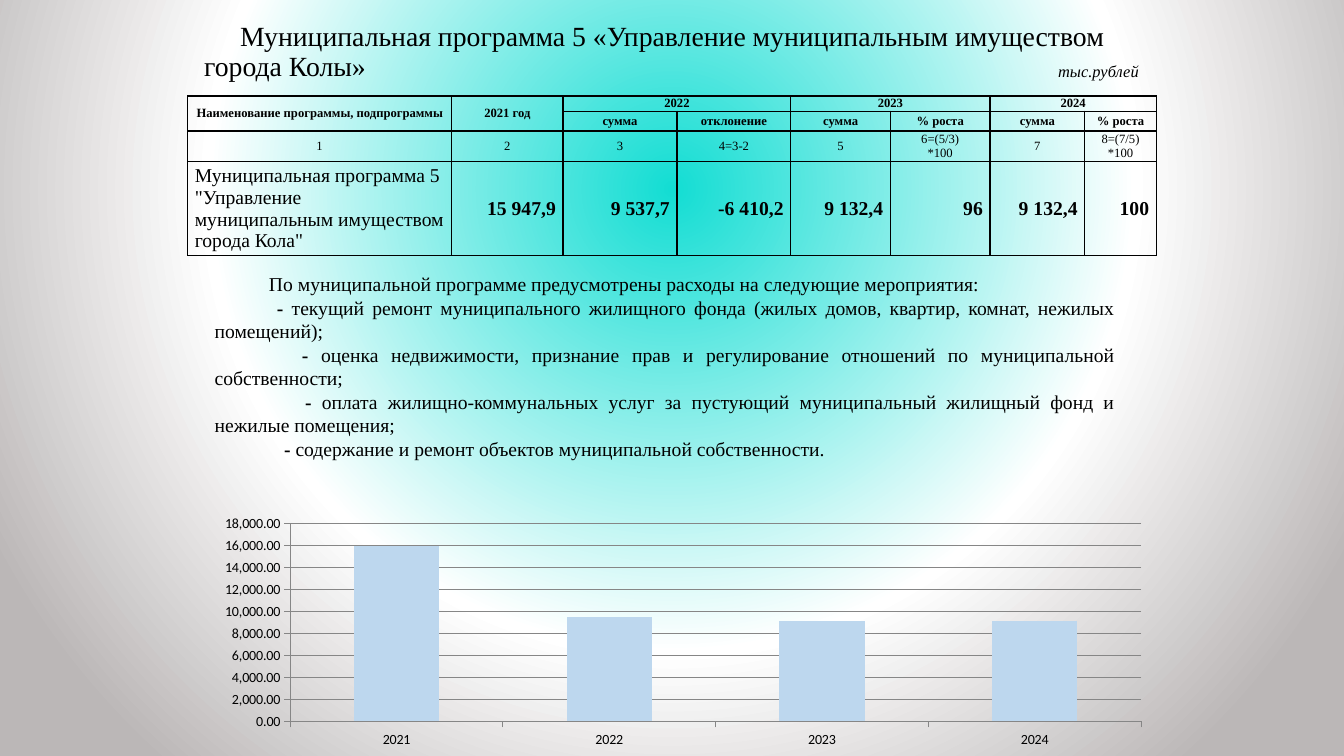
"""Build the slide on municipal programme 5 with its table, measures and chart."""
from lxml import etree
from pptx import Presentation
from pptx.chart.data import CategoryChartData
from pptx.dml.color import RGBColor
from pptx.enum.chart import XL_CHART_TYPE, XL_TICK_MARK
from pptx.enum.text import MSO_ANCHOR, MSO_AUTO_SIZE, PP_ALIGN
from pptx.oxml import parse_xml
from pptx.oxml.ns import nsdecls, qn
from pptx.util import Cm, Pt

LEFT, CENTER, RIGHT, JUSTIFY = PP_ALIGN.LEFT, PP_ALIGN.CENTER, PP_ALIGN.RIGHT, PP_ALIGN.JUSTIFY
MIDDLE = MSO_ANCHOR.MIDDLE
COLUMN_CLUSTERED = XL_CHART_TYPE.COLUMN_CLUSTERED
TICK_OUTSIDE = XL_TICK_MARK.OUTSIDE

SERIF, SANS = "Times New Roman", "Calibri"
COLORS = {
    "text": "000000", "bar": "BDD7EE", "axis": "868686",
    "center": "13DDD3", "ring": "FFFFFF", "edge": "BBB7B7",
}
TITLE = "Муниципальная программа 5 «Управление муниципальным имуществом города Колы»"
UNIT = "тыс.рублей"
ROWS = [
    ["Наименование программы, подпрограммы", "2021 год", "2022", "", "2023", "", "2024", ""],
    ["", "", "сумма", "отклонение", "сумма", "% роста", "сумма", "% роста"],
    ["1", "2", "3", "4=3-2", "5", "6=(5/3)\n*100", "7", "8=(7/5)\n*100"],
    ['Муниципальная программа 5 "Управление муниципальным имуществом города Кола"',
     "15 947,9", "9 537,7", "-6 410,2", "9 132,4", "96", "9 132,4", "100"],
]
MERGES = [(0, 0, 1, 0), (0, 1, 1, 1), (0, 2, 0, 3), (0, 4, 0, 5), (0, 6, 0, 7)]
COLUMN_WIDTHS = [6.65, 2.81, 2.87, 2.87, 2.51, 2.51, 2.39, 1.8]
ROW_HEIGHTS = [0.33, 0.5, 0.69, 2.13]
MEASURES = [
    (1.37, "", "По муниципальной программе предусмотрены расходы на следующие мероприятия:"),
    (1.57, "-", " текущий ремонт муниципального жилищного фонда (жилых домов, квартир, комнат, нежилых помещений);"),
    (2.2, "-", " оценка недвижимости, признание прав и регулирование отношений по муниципальной собственности;"),
    (2.28, "-", " оплата жилищно-коммунальных услуг за пустующий муниципальный жилищный фонд и нежилые помещения;"),
    (1.75, "-", " содержание и ремонт объектов муниципальной собственности."),
]
SPENDING = {"2021": 15900, "2022": 9500, "2023": 9100, "2024": 9100}
PLOT_LAYOUT = {"x": 0.083, "y": 0.087, "w": 0.901, "h": 0.778}


def style_font(font, size, bold=False, italic=False, name=SERIF):
    font.name, font.size, font.bold, font.italic = name, Pt(size), bold, italic
    font.color.rgb = RGBColor.from_string(COLORS["text"])


def add_background(slide):
    stops = [(0, "center"), (60, "ring"), (100, "edge")]
    stop_xml = "".join(
        f'<a:gs pos="{position * 1000}"><a:srgbClr val="{COLORS[name]}"/></a:gs>'
        for position, name in stops)
    background = parse_xml(
        f'<p:bg {nsdecls("p", "a")}><p:bgPr><a:gradFill rotWithShape="1"><a:gsLst>{stop_xml}</a:gsLst>'
        '<a:path path="circle"><a:fillToRect l="20000" t="10000" r="20000" b="60000"/></a:path>'
        '</a:gradFill><a:effectLst/></p:bgPr></p:bg>')
    slide.element.cSld.insert(0, background)


def add_title(slide):
    title = slide.shapes.title
    title.left, title.top, title.width, title.height = Cm(4.72), Cm(0.53), Cm(24.41), Cm(1.6)
    frame = title.text_frame
    frame.word_wrap, frame.auto_size, frame.vertical_anchor = True, MSO_AUTO_SIZE.NONE, MIDDLE
    frame.text = TITLE
    paragraph = frame.paragraphs[0]
    paragraph.alignment, paragraph.line_spacing = LEFT, 0.9
    style_font(paragraph.runs[0].font, 19.8)
    properties = paragraph._p.get_or_add_pPr()
    properties.set("marL", str(Cm(0.17)))
    properties.set("indent", str(Cm(0.91)))


def add_unit(slide):
    frame = slide.shapes.add_textbox(Cm(25.7), Cm(1.55), Cm(3), Cm(0.5)).text_frame
    frame.word_wrap = True
    frame.margin_left = frame.margin_right = frame.margin_top = frame.margin_bottom = 0
    frame.text = UNIT
    paragraph = frame.paragraphs[0]
    paragraph.alignment = RIGHT
    style_font(paragraph.runs[0].font, 11.7, italic=True)


def add_borders(cell):
    properties = cell._tc.get_or_add_tcPr()
    for index, side in enumerate(("lnL", "lnR", "lnT", "lnB")):
        properties.insert(index, parse_xml(
            f'<a:{side} {nsdecls("a")} w="{Pt(1)}"><a:solidFill>'
            f'<a:srgbClr val="{COLORS["text"]}"/></a:solidFill></a:{side}>'))


def add_budget_table(slide):
    frame = slide.shapes.add_table(
        len(ROWS), len(COLUMN_WIDTHS), Cm(4.73), Cm(2.42), Cm(sum(COLUMN_WIDTHS)), Cm(sum(ROW_HEIGHTS)))
    table = frame.table
    table.first_row = table.horz_banding = False
    for column, width in zip(table.columns, COLUMN_WIDTHS):
        column.width = Cm(width)
    for row, height in zip(table.rows, ROW_HEIGHTS):
        row.height = Cm(height)
    last_row = len(ROWS) - 1
    for row_index, texts in enumerate(ROWS):
        for column_index, text in enumerate(texts):
            cell = table.cell(row_index, column_index)
            cell.text_frame.text = text
            cell.fill.background()
            cell.vertical_anchor = MIDDLE
            cell.margin_left = cell.margin_right = Cm(0.18)
            cell.margin_top = cell.margin_bottom = 0
            add_borders(cell)
            in_data = row_index == last_row
            bold = row_index < 2 or (in_data and column_index > 0)
            data_alignment = RIGHT if column_index else LEFT
            for paragraph in cell.text_frame.paragraphs:
                paragraph.alignment = data_alignment if in_data else CENTER
                for run in paragraph.runs:
                    style_font(run.font, 14 if in_data else 9, bold)
                if not text:
                    etree.SubElement(paragraph._p, qn("a:endParaRPr"), sz="900")
    for top, left, bottom, right in MERGES:
        table.cell(top, left).merge(table.cell(bottom, right))


def add_measures(slide):
    box = slide.shapes.add_textbox(Cm(5.16), Cm(6.73), Cm(23.19), Cm(5.05))
    frame = box.text_frame
    frame.word_wrap = True
    for index, (indent, dash, text) in enumerate(MEASURES):
        paragraph = frame.add_paragraph() if index else frame.paragraphs[0]
        paragraph.alignment, paragraph.line_spacing = JUSTIFY, 1.0
        paragraph._p.get_or_add_pPr().set("indent", str(Cm(indent)))
        for part, bold in [(dash, True), (text, False)]:
            if part:
                run = paragraph.add_run()
                run.text = part
                style_font(run.font, 14, bold)


def add_spending_chart(slide):
    data = CategoryChartData(number_format="#,##0.00")
    data.categories = list(SPENDING)
    data.add_series("Расходы", list(SPENDING.values()))
    chart = slide.shapes.add_chart(
        COLUMN_CLUSTERED, Cm(5.34), Cm(12.63), Cm(23.8), Cm(6.42), data).chart
    chart.has_legend = chart.has_title = False
    style_font(chart.font, 10, name=SANS)
    plot = chart.plots[0]
    plot.gap_width, plot.vary_by_categories = 150, False
    fill = plot.series[0].format.fill
    fill.solid()
    fill.fore_color.rgb = RGBColor.from_string(COLORS["bar"])
    value_axis, category_axis = chart.value_axis, chart.category_axis
    value_axis.minimum_scale, value_axis.maximum_scale, value_axis.major_unit = 0, 18000, 2000
    value_axis.tick_labels.number_format = "#,##0.00"
    value_axis.tick_labels.number_format_is_linked = False
    value_axis.has_major_gridlines = True
    for axis in (value_axis, category_axis):
        axis.major_tick_mark = TICK_OUTSIDE
    for part in (value_axis, category_axis, value_axis.major_gridlines):
        part.format.line.color.rgb = RGBColor.from_string(COLORS["axis"])
        part.format.line.width = Pt(0.75)
    plot_area = chart.element.find(".//" + qn("c:plotArea"))
    for layout in plot_area.findall(qn("c:layout")):
        plot_area.remove(layout)
    layout = etree.Element(qn("c:layout"))
    manual = etree.SubElement(layout, qn("c:manualLayout"))
    settings = {"layoutTarget": "inner", "xMode": "edge", "yMode": "edge", **PLOT_LAYOUT}
    for name, value in settings.items():
        etree.SubElement(manual, qn("c:" + name), val=str(value))
    plot_area.insert(0, layout)


def main():
    presentation = Presentation()
    presentation.slide_width, presentation.slide_height = Cm(33.87), Cm(19.05)
    slide = presentation.slides.add_slide(presentation.slide_layouts[5])
    add_background(slide)
    add_title(slide)
    add_unit(slide)
    add_budget_table(slide)
    add_measures(slide)
    add_spending_chart(slide)
    presentation.save("out.pptx")


if __name__ == "__main__":
    main()
